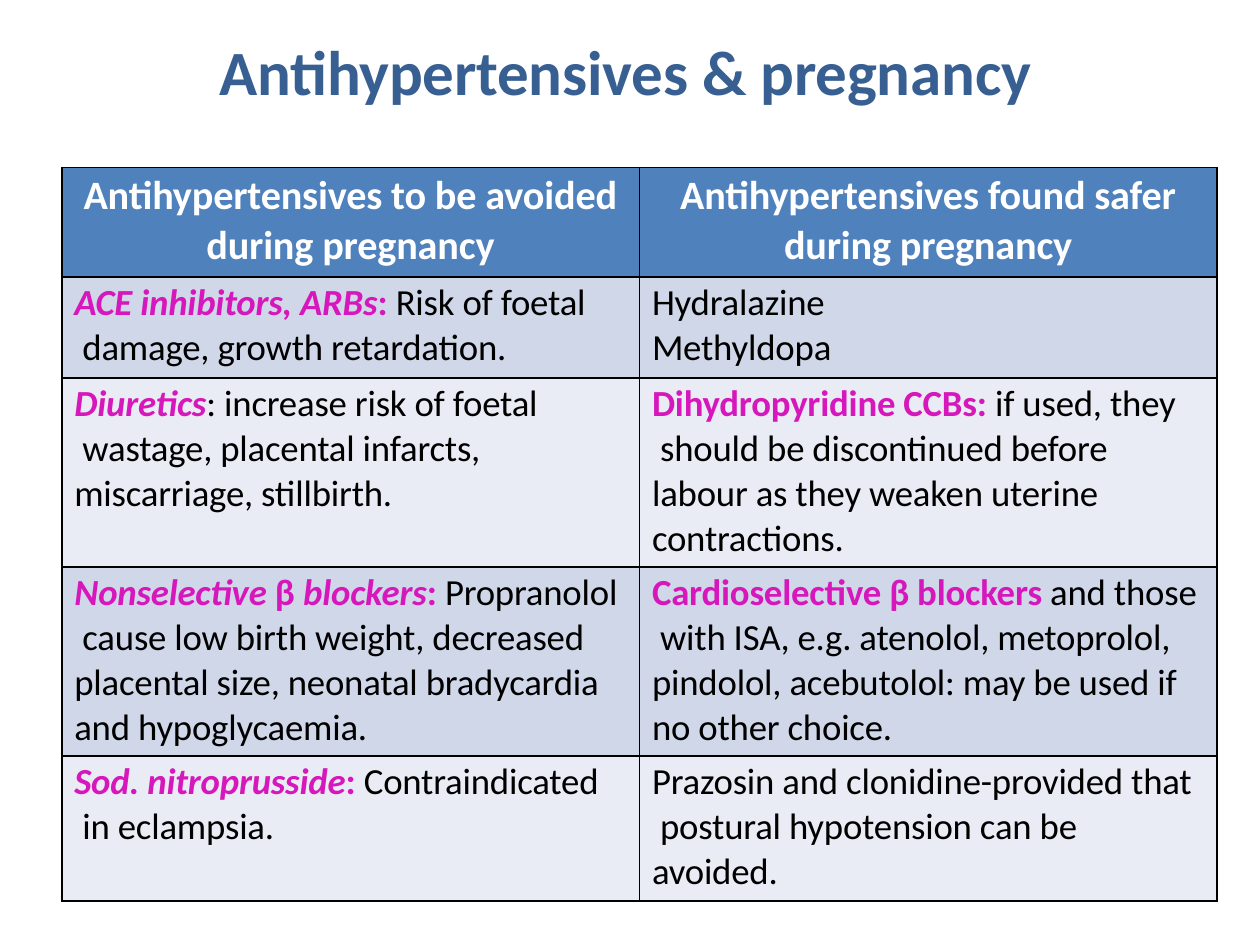
from lxml.etree import SubElement
from pptx import Presentation
from pptx.dml.color import RGBColor
from pptx.enum.text import MSO_ANCHOR, MSO_AUTO_SIZE, PP_ALIGN
from pptx.oxml.ns import qn
from pptx.util import Inches, Pt

HUES = {
    "title": "375F92", "head": "4F81BC", "odd": "D0D7E8", "even": "E9ECF4",
    "key": "D617BB", "text": "000000", "white": "FFFFFF", "line": "000000",
}
COLS, ROWS = 100, 75

# A cell is a list of (text, marks): k = key colour and bold, i = italic.
HEADS = [
    "Antihypertensives to be avoided\vduring pregnancy",
    "Antihypertensives found safer\vduring pregnancy",
]
BODY = [
    ([("ACE inhibitors, ARBs", "ki"), (": ", "k"),
      ("Risk of foetal\v damage, growth retardation.", "")],
     [("Hydralazine\vMethyldopa", "")]),
    ([("Diuretics", "ki"),
      (": increase risk of foetal\v wastage, placental infarcts,\v"
       "miscarriage, stillbirth.", "")],
     [("Dihydropyridine CCBs: ", "k"),
      ("if used, they\v should be discontinued before\v"
       "labour as they weaken uterine\vcontractions.", "")]),
    ([("Nonselective ", "ki"), ("β ", "k"), ("blockers", "ki"), (": ", "k"),
      ("Propranolol\v cause low birth weight, decreased\v"
       "placental size, neonatal bradycardia\vand hypoglycaemia.", "")],
     [("Cardioselective β blockers ", "k"),
      ("and those\v with ISA, e.g. atenolol, metoprolol,\v"
       "pindolol, acebutolol: may be used if\vno other choice.", "")]),
    ([("Sod. nitroprusside", "ki"), (": ", "k"),
      ("Contraindicated\v in eclampsia.", "")],
     [("Prazosin and clonidine-provided that\v postural hypotension can be\v"
       "avoided.", "")]),
]


def hue(name):
    return RGBColor.from_string(HUES[name])


def write(para, text, size=21, color="text", bold=False, italic=False, track=-0.1):
    """Add text to a paragraph; a vertical tab starts a new line."""
    for n, part in enumerate(text.split("\v")):
        if n:
            para.add_line_break()
        run = para.add_run()
        run.text = part
        font = run.font
        font.name, font.size = "Calibri", Pt(size)
        font.bold, font.italic = bold, italic
        font.color.rgb = hue(color)
        run._r.get_or_add_rPr().set("spc", str(round(track * 100)))


class Deck:
    def __init__(self):
        self.prs = Presentation()
        self.prs.slide_width, self.prs.slide_height = Inches(10), Inches(7.5)
        self.slide = self.prs.slides.add_slide(self.prs.slide_layouts[5])

    def x(self, cols):
        return round(self.prs.slide_width * cols / COLS)

    def y(self, rows):
        return round(self.prs.slide_height * rows / ROWS)

    def title(self, text, x, y, w, h):
        box = self.slide.shapes.title
        box.left, box.top, box.width, box.height = (
            self.x(x), self.y(y), self.x(w), self.y(h))
        frame = box.text_frame
        frame.auto_size = MSO_AUTO_SIZE.NONE
        frame.vertical_anchor = MSO_ANCHOR.TOP
        frame.margin_left = frame.margin_right = frame.margin_bottom = 0
        frame.margin_top = Inches(0.01)
        para = frame.paragraphs[0]
        para.alignment = PP_ALIGN.LEFT
        para.space_before = Pt(1)
        write(para, text, size=36, color="title", bold=True)

    def table(self, x, y, w, rows):
        """Add the two-column table; rows gives the height of each row."""
        grid = self.slide.shapes.add_table(
            len(rows), 2, self.x(x), self.y(y), self.x(w), self.y(sum(rows))).table
        for row, high in zip(grid.rows, rows):
            row.height = self.y(high)
        for c, text in enumerate(HEADS):
            para = self.cell(grid.cell(0, c), "head", 2.1)
            para.alignment = PP_ALIGN.CENTER
            write(para, text, size=23, color="white", bold=True)
        for r, pair in enumerate(BODY, 1):
            for c, runs in enumerate(pair):
                para = self.cell(grid.cell(r, c), "odd" if r % 2 else "even", 2.3)
                para._p.get_or_add_pPr().set("marL", str(Inches(0.1)))
                for text, marks in runs:
                    key = "k" in marks
                    write(para, text, color="key" if key else "text",
                          bold=key, italic="i" in marks)

    def cell(self, cell, fill, gap):
        """Style a cell and return its first paragraph."""
        cell.margin_left = cell.margin_right = cell.margin_bottom = 0
        cell.margin_top = Inches(0.03)
        props = cell._tc.get_or_add_tcPr()
        for side in ("a:lnL", "a:lnR", "a:lnT", "a:lnB"):
            line = SubElement(props, qn(side), w=str(Pt(1)))
            paint = SubElement(line, qn("a:solidFill"))
            SubElement(paint, qn("a:srgbClr"), val=HUES["line"])
        cell.fill.solid()
        cell.fill.fore_color.rgb = hue(fill)
        para = cell.text_frame.paragraphs[0]
        para.space_before = Pt(gap)
        return para


def main():
    deck = Deck()
    deck.title("Antihypertensives & pregnancy", 17.4, 2.5, 65.2, 6.3)
    deck.table(4.9, 13.3, 91.7, [8.7, 8, 15, 15, 11.5])
    deck.prs.save("out.pptx")


if __name__ == "__main__":
    main()
